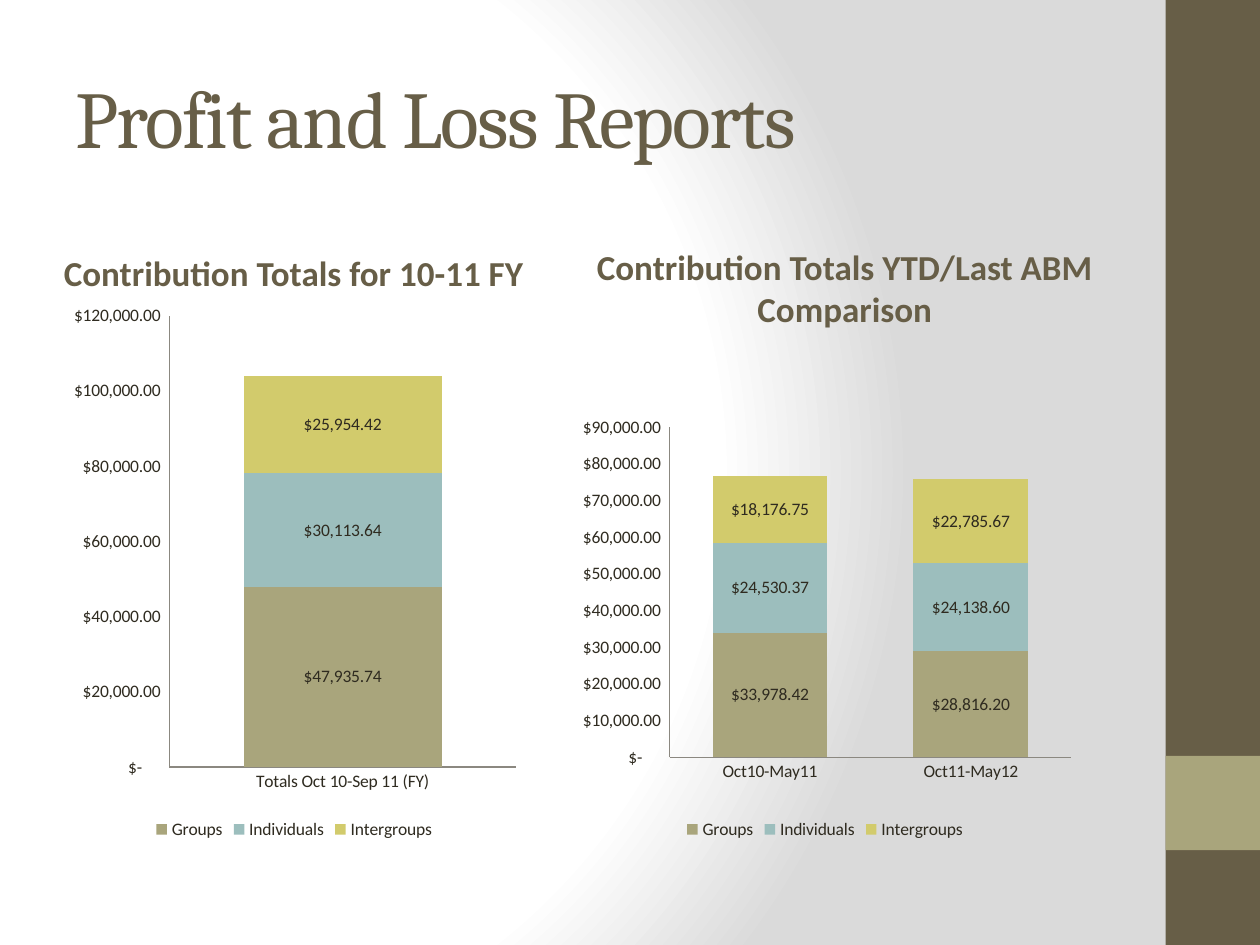
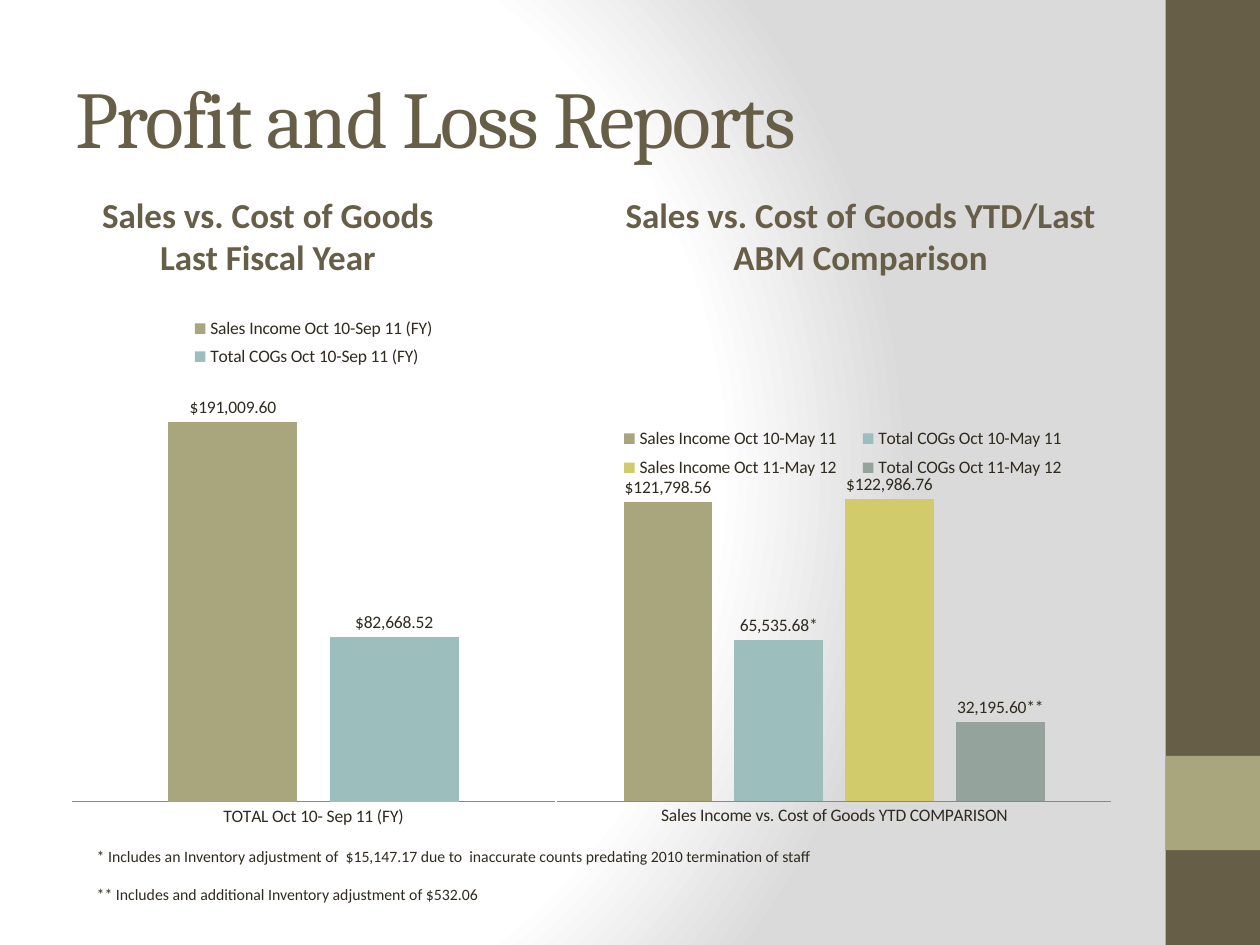
from dataclasses import dataclass

from pptx import Presentation
from pptx.chart.data import CategoryChartData
from pptx.dml.color import RGBColor
from pptx.enum.chart import XL_CHART_TYPE, XL_LABEL_POSITION, XL_LEGEND_POSITION, XL_TICK_MARK
from pptx.enum.shapes import MSO_SHAPE
from pptx.enum.text import MSO_ANCHOR, MSO_AUTO_SIZE, PP_ALIGN
from pptx.oxml import parse_xml
from pptx.oxml.ns import nsdecls, qn
from pptx.util import Cm, Pt


@dataclass(frozen=True)
class Theme:
    brown: str = "675E47"
    olive: str = "A9A57C"
    ink: str = "2F2B20"
    axis: str = "8B8880"
    series: tuple = ("A9A57C", "9CBEBD", "D2CB6C", "95A39D")
    backdrop: tuple = ((0, "FFFFFF"), (75, "FFFFFF"), (100, "DADADA"))
    heading_font: str = "Cambria"
    body_font: str = "Calibri"
    title_size: int = 46
    heading_size: int = 20
    chart_size: int = 10
    note_size: int = 9


THEME = Theme()
TITLE_STYLE = dict(name=THEME.heading_font, size=Pt(THEME.title_size), bold=False)
HEADING_STYLE = dict(name=THEME.body_font, size=Pt(THEME.heading_size), bold=True)
CHART_STYLE = dict(name=THEME.body_font, size=Pt(THEME.chart_size), bold=False)
NOTE_STYLE = dict(name=THEME.body_font, size=Pt(THEME.note_size), bold=False)
ACCOUNTING = '_("$"* #,##0.00_);_("$"* \\(#,##0.00\\);_("$"* "-"??_);_(@_)'

# Boxes are left, top, width, height in centimetres.
TITLE_BOX = (1.27, 0.76, 21.16, 3.18)
NOTES_BOX = (1.7, 16.94, 19.25, 1.42)
BANDS = [((23.5, 0, 1.9, 19.05), THEME.brown),
         ((23.5, 15.24, 1.9, 1.9), THEME.olive)]

CHART_KINDS = {
    "stacked": dict(
        type=XL_CHART_TYPE.COLUMN_STACKED, legend=XL_LEGEND_POSITION.BOTTOM,
        labels=XL_LABEL_POSITION.CENTER, show_values_axis=True,
        spacing=dict(gap_width=75, overlap=100)),
    "clustered": dict(
        type=XL_CHART_TYPE.COLUMN_CLUSTERED, legend=XL_LEGEND_POSITION.TOP,
        labels=XL_LABEL_POSITION.OUTSIDE_END, show_values_axis=False,
        spacing=dict(gap_width=150, overlap=-25)),
}

# Plot and legend areas are fractions of their chart: x, y, width, height.
REPORTS = [
    dict(
        title="Profit and Loss Reports",
        kind="stacked",
        panels=[
            dict(heading="Contribution Totals for 10-11 FY",
                 heading_box=(0.84, 4.27, 10.16, 1.78),
                 chart_box=(1.27, 5.92, 9.32, 11.1),
                 plot=(0.23, 0.04, 0.75, 0.82),
                 top=120000, step=20000,
                 categories=["Totals Oct 10-Sep 11 (FY)"],
                 series=[("Groups", [47935.74]),
                         ("Individuals", [30113.64]),
                         ("Intergroups", [25954.42])]),
            dict(heading="Contribution Totals YTD/Last ABM Comparison",
                 heading_box=(11.63, 3.81, 10.8, 2.97),
                 chart_box=(11.23, 8.26, 10.8, 8.76),
                 plot=(0.21, 0.04, 0.75, 0.76),
                 top=90000, step=10000,
                 categories=["Oct10-May11", "Oct11-May12"],
                 series=[("Groups", [33978.42, 28816.20]),
                         ("Individuals", [24530.37, 24138.60]),
                         ("Intergroups", [18176.75, 22785.67])]),
        ],
    ),
    dict(
        title="Profit and Loss Reports",
        kind="clustered",
        panels=[
            dict(heading="Sales vs. Cost of Goods Last Fiscal Year",
                 heading_box=(1.27, 3.81, 8.26, 1.91),
                 chart_box=(1.24, 5.08, 10.16, 11.79),
                 plot=(0.02, 0.26, 0.96, 0.68),
                 legend=(0.25, 0.1, 0.5, 0.11),
                 top=200000, step=50000,
                 categories=["TOTAL Oct 10- Sep 11 (FY)"],
                 series=[("Sales Income Oct 10-Sep 11 (FY)", [191009.60]),
                         ("Total COGs Oct 10-Sep 11 (FY)", [82668.52])]),
            dict(heading="Sales vs. Cost of Goods YTD/Last ABM Comparison",
                 heading_box=(12.27, 3.81, 10.16, 1.91),
                 chart_box=(11, 8.28, 11.63, 8.56),
                 plot=(0.02, 0.11, 0.96, 0.81),
                 legend=(0.1, 0.02, 0.83, 0.16),
                 top=140000, step=20000,
                 categories=["Sales Income vs. Cost of Goods YTD COMPARISON"],
                 series=[("Sales Income Oct 10-May 11", [121798.56]),
                         ("Total COGs Oct 10-May 11", [65535.68]),
                         ("Sales Income Oct 11-May 12", [122986.76]),
                         ("Total COGs Oct 11-May 12", [32195.60])],
                 starred={1: "65,535.68*", 3: "32,195.60**"}),
        ],
        notes=[
            "* Includes an Inventory adjustment of  $15,147.17 due to  inaccurate counts "
            "predating 2010 termination of staff",
            "** Includes and additional Inventory adjustment of $532.06",
        ],
    ),
]


def assign(target, values):
    for name, value in values.items():
        setattr(target, name, value)


def cm_box(box):
    return [Cm(length) for length in box]


def place(shape, box):
    assign(shape, dict(zip(("left", "top", "width", "height"), cm_box(box))))


def style_font(font, style, color):
    assign(font, style)
    font.color.rgb = RGBColor.from_string(color)


def paint(fill, color):
    fill.solid()
    fill.fore_color.rgb = RGBColor.from_string(color)


def set_backdrop(master):
    """Give the master a circular gradient, which python-pptx cannot set itself."""
    master.background.fill.gradient()
    gradient = master._element.find(".//" + qn("a:gradFill"))
    stops = "".join(f'<a:gs pos="{pos * 1000}"><a:srgbClr val="{color}"/></a:gs>'
                    for pos, color in THEME.backdrop)
    gradient.getparent().replace(gradient, parse_xml(
        f'<a:gradFill {nsdecls("a")} rotWithShape="1"><a:gsLst>{stops}</a:gsLst>'
        '<a:path path="circle"><a:fillToRect l="20000" t="50000" r="100000" b="50000"/>'
        '</a:path></a:gradFill>'))


def add_bands(master, slide):
    """Draw the side bands on a slide, then move them to the master."""
    for number, (box, color) in enumerate(BANDS):
        band = slide.shapes.add_shape(MSO_SHAPE.RECTANGLE, *cm_box(box))
        band.shadow.inherit = False
        paint(band.fill, color)
        band.line.fill.background()
        band._element.nvSpPr.cNvPr.set("id", str(100 + number))
        master.shapes._spTree.append(band._element)


def fill_placeholder(holder, text, box, style, align, anchor):
    place(holder, box)
    frame = holder.text_frame
    frame.text = text
    assign(frame, dict(vertical_anchor=anchor, word_wrap=True, auto_size=MSO_AUTO_SIZE.NONE))
    paragraph = frame.paragraphs[0]
    paragraph.alignment = align
    run = paragraph.runs[0]
    style_font(run.font, style, THEME.brown)
    return run


def set_layout(parent, index, area, target=""):
    """Fix the place of a plot or legend inside its chart."""
    for old in parent.findall(qn("c:layout")):
        parent.remove(old)
    modes = '<c:xMode val="edge"/><c:yMode val="edge"/>'
    lengths = "".join(f'<c:{tag} val="{value}"/>' for tag, value in zip("xywh", area))
    parent.insert(index, parse_xml(
        f'<c:layout {nsdecls("c")}><c:manualLayout>{target}{modes}{lengths}'
        '</c:manualLayout></c:layout>'))


def format_axes(chart, panel, show_values_axis):
    assign(chart.value_axis, dict(
        has_major_gridlines=False, minimum_scale=0, maximum_scale=panel["top"],
        major_unit=panel["step"], visible=show_values_axis))
    for axis in (chart.category_axis, chart.value_axis):
        assign(axis, dict(major_tick_mark=XL_TICK_MARK.NONE, minor_tick_mark=XL_TICK_MARK.NONE))
        axis.format.line.width = Pt(0.75)
        axis.format.line.color.rgb = RGBColor.from_string(THEME.axis)
    assign(chart.value_axis.tick_labels,
           dict(number_format=ACCOUNTING, number_format_is_linked=False))


def format_series(plot, starred, label_position):
    for number, (series, color) in enumerate(zip(plot.series, THEME.series)):
        paint(series.format.fill, color)
        series.invert_if_negative = False
        assign(series.data_labels, dict(
            show_value=True, number_format=ACCOUNTING, number_format_is_linked=False,
            position=label_position))
        if number in starred:
            label = series.points[0].data_label
            label.text_frame.text = starred[number]
            style_font(label.text_frame.paragraphs[0].runs[0].font, CHART_STYLE, THEME.ink)
            label.position = label_position


def add_column_chart(slide, panel, kind):
    figures = CategoryChartData(number_format=ACCOUNTING)
    figures.categories = panel["categories"]
    for name, values in panel["series"]:
        figures.add_series(name, values)
    chart = slide.shapes.add_chart(kind["type"], *cm_box(panel["chart_box"]), figures).chart
    assign(chart, dict(has_title=False, has_legend=True))
    style_font(chart.font, CHART_STYLE, THEME.ink)

    plot = chart.plots[0]
    assign(plot, dict(vary_by_categories=False, **kind["spacing"]))
    format_series(plot, panel.get("starred", {}), kind["labels"])
    format_axes(chart, panel, kind["show_values_axis"])

    assign(chart.legend, dict(position=kind["legend"], include_in_layout=False))
    if "legend" in panel:
        set_layout(chart.legend._element, 1, panel["legend"])
    plot_area = chart._chartSpace.find(".//" + qn("c:plotArea"))
    set_layout(plot_area, 0, panel["plot"], '<c:layoutTarget val="inner"/>')


def add_notes(slide, notes):
    frame = slide.shapes.add_textbox(*cm_box(NOTES_BOX)).text_frame
    assign(frame, dict(word_wrap=True, text="\n".join(notes)))
    for paragraph in frame.paragraphs:
        style_font(paragraph.runs[0].font, NOTE_STYLE, THEME.ink)
    for paragraph in frame.paragraphs[1:]:
        paragraph.space_before = Pt(11)


def add_report(presentation, report):
    comparison_layout = presentation.slide_layouts[4]
    slide = presentation.slides.add_slide(comparison_layout)
    holders = {holder.placeholder_format.idx: holder for holder in slide.placeholders}
    title = fill_placeholder(holders[0], report["title"], TITLE_BOX, TITLE_STYLE,
                             PP_ALIGN.LEFT, MSO_ANCHOR.MIDDLE)
    title.font._element.set("spc", "-100")
    for panel, heading, content in zip(report["panels"], (1, 3), (2, 4)):
        fill_placeholder(holders[heading], panel["heading"], panel["heading_box"],
                         HEADING_STYLE, PP_ALIGN.CENTER, MSO_ANCHOR.BOTTOM)
        unused = holders[content]._element
        unused.getparent().remove(unused)
        add_column_chart(slide, panel, CHART_KINDS[report["kind"]])
    if "notes" in report:
        add_notes(slide, report["notes"])
    return slide


def main():
    presentation = Presentation()
    assign(presentation, dict(slide_width=Cm(25.4), slide_height=Cm(19.05)))
    set_backdrop(presentation.slide_master)
    slides = [add_report(presentation, report) for report in REPORTS]
    add_bands(presentation.slide_master, slides[0])
    presentation.save("out.pptx")


if __name__ == "__main__":
    main()
